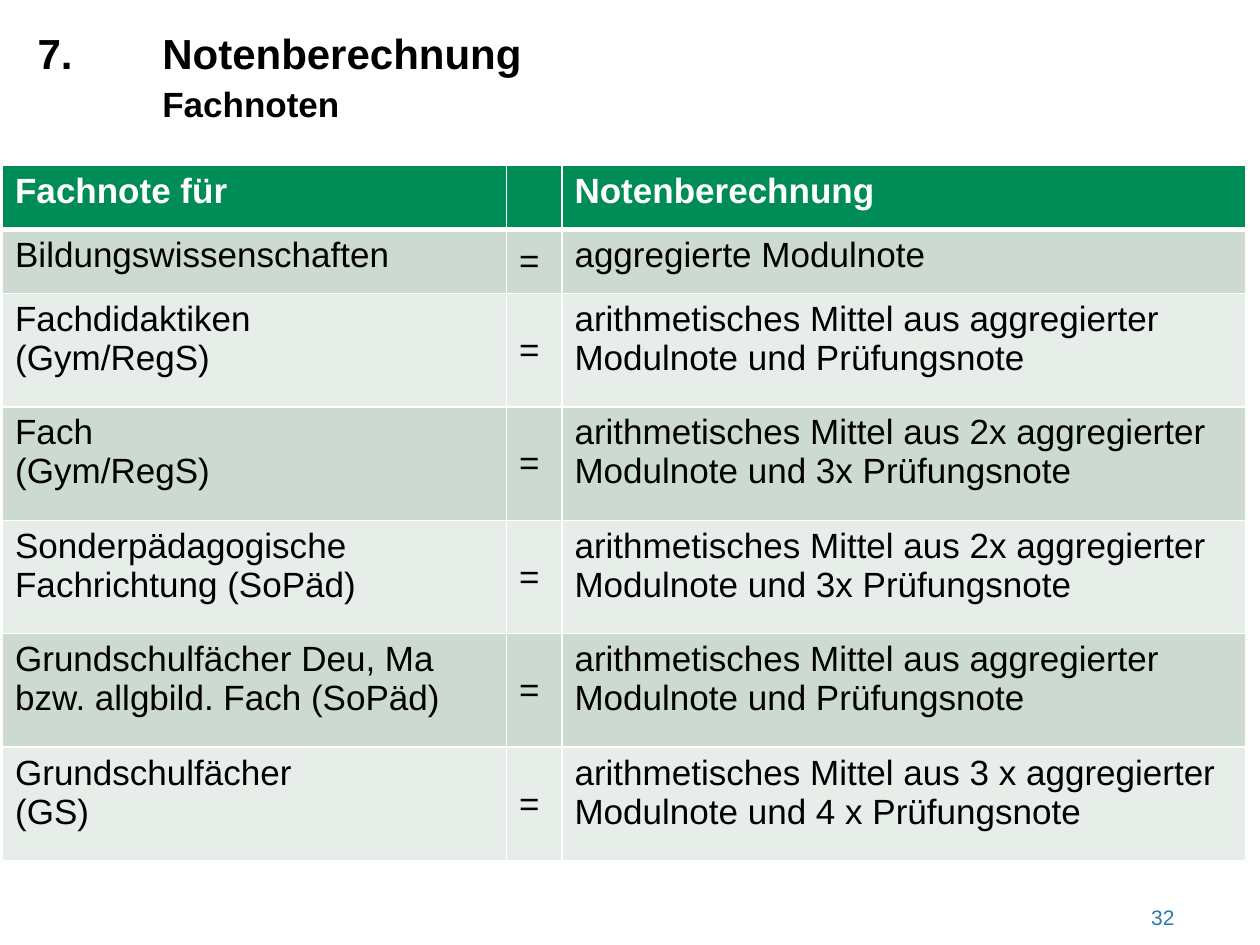
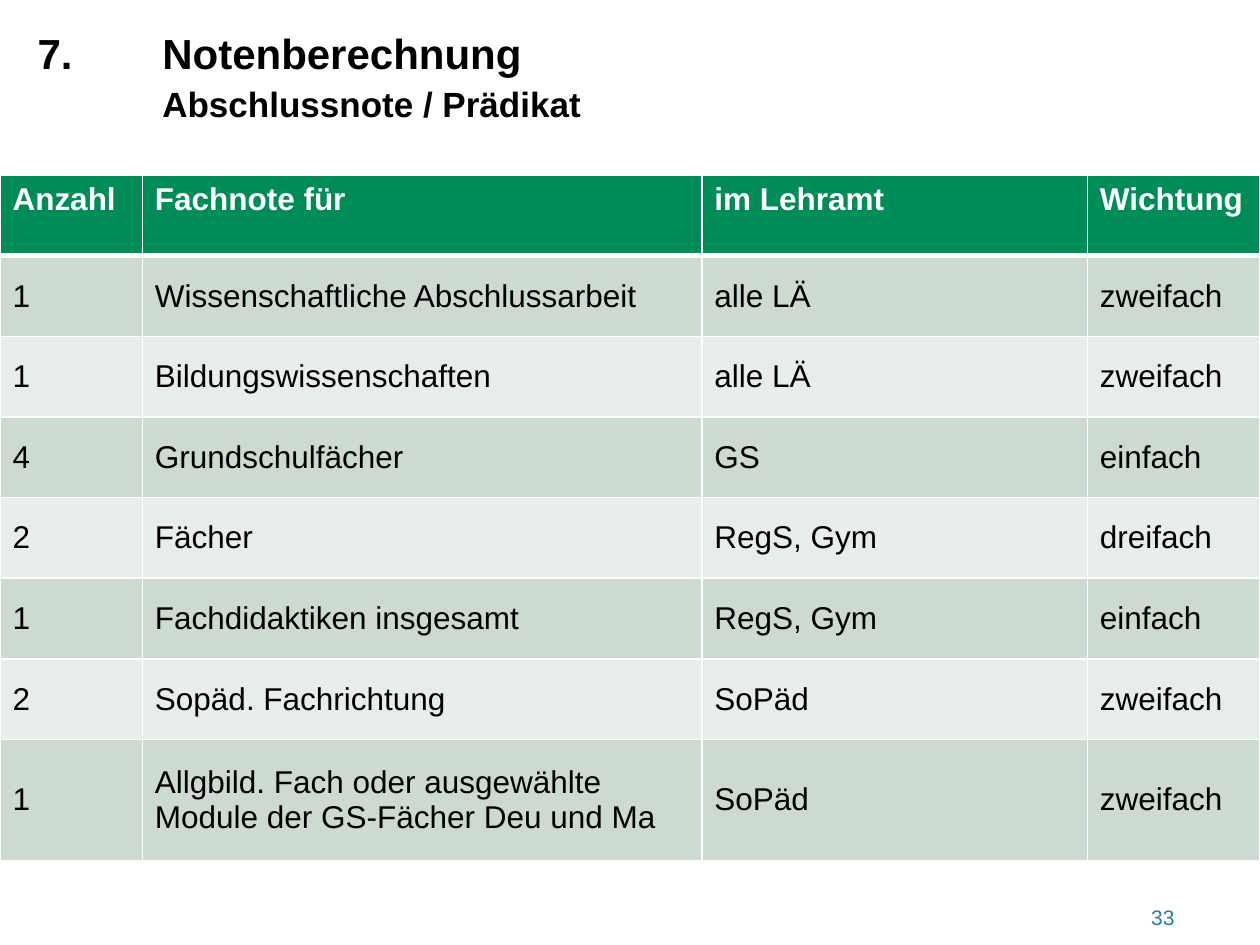
from dataclasses import dataclass

from lxml import etree
from pptx import Presentation
from pptx.dml.color import RGBColor
from pptx.enum.text import MSO_ANCHOR, PP_ALIGN
from pptx.oxml.ns import qn
from pptx.util import Inches, Pt

TOP, MIDDLE = MSO_ANCHOR.TOP, MSO_ANCHOR.MIDDLE
RIGHT = PP_ALIGN.RIGHT


@dataclass(frozen=True)
class Theme:
    font: str = "Arial"
    ink: str = "000000"
    white: str = "FFFFFF"
    header: str = "008C57"
    bands: tuple = ("CCDAD1", "E7EEEA")
    page: str = "287DA8"
    title_size: int = 24
    subtitle_size: int = 20
    page_size: int = 12
    grid: int = 1
    header_rule: int = 3
    title_indent: float = 0.99


def write(paragraph, text, *, font, size, color, bold=False):
    run = paragraph.add_run()
    run.text = text
    run.font.name = font
    run.font.size = Pt(size)
    run.font.bold = bold
    run.font.color.rgb = RGBColor.from_string(color)


def set_borders(cell, color, widths):
    """Draw cell edges; widths maps L, R, T, B (in that order) to points."""
    properties = cell._tc.get_or_add_tcPr()
    for side, width in widths.items():
        edge = etree.SubElement(properties, qn(f"a:ln{side}"), w=str(Pt(width)))
        fill = etree.SubElement(edge, qn("a:solidFill"))
        etree.SubElement(fill, qn("a:srgbClr"), val=color)


class Deck:
    def __init__(self, theme):
        self.theme = theme
        self.presentation = Presentation()
        self.presentation.slide_width = Inches(10)
        self.presentation.slide_height = Inches(7.5)
        self.slide = None

    def add_slide(self, number, title, subtitle, page):
        layout = self.presentation.slide_layouts[6]
        self.slide = self.presentation.slides.add_slide(layout)
        self.add_title(number, title, subtitle)
        self.add_page_number(page)

    def add_frame(self, left, top, width, height):
        box = self.slide.shapes.add_textbox(
            Inches(left), Inches(top), Inches(width), Inches(height))
        box.text_frame.word_wrap = True
        return box.text_frame

    def add_title(self, number, title, subtitle):
        theme = self.theme
        heading = self.add_frame(0.2, 0.13, 6.06, 1.18).paragraphs[0]
        indent = Inches(theme.title_indent)
        properties = heading._p.get_or_add_pPr()
        properties.set("marL", str(indent))
        properties.set("indent", str(-indent))
        heading.line_spacing = 1.1
        style = dict(font=theme.font, color=theme.ink, bold=True)
        write(heading, f"{number}\t{title}", size=theme.title_size, **style)
        heading.add_line_break()
        write(heading, subtitle, size=theme.subtitle_size, **style)

    def add_page_number(self, page):
        theme = self.theme
        footer = self.add_frame(8.49, 7, 0.93, 0.33).paragraphs[0]
        footer.alignment = RIGHT
        footer.line_spacing = Pt(24)
        write(footer, str(page), font=theme.font, size=theme.page_size, color=theme.page)

    def add_grade_table(self, left, top, columns, heights, rows, size, anchors):
        """Fill a banded table; anchors gives each column's place in the body rows."""
        table = self.slide.shapes.add_table(
            len(rows), len(columns), Inches(left), Inches(top),
            Inches(sum(columns)), Inches(sum(heights))).table
        for column, width in zip(table.columns, columns):
            column.width = Inches(width)
        for row, height in zip(table.rows, heights):
            row.height = Inches(height)
        for r, texts in enumerate(rows):
            for c, text in enumerate(texts):
                self.fill_cell(table.cell(r, c), r, text, size, anchors[c])

    def fill_cell(self, cell, row, text, size, anchor):
        theme = self.theme
        is_header = row == 0
        set_borders(cell, theme.white, {
            "L": theme.grid,
            "R": theme.grid,
            "T": theme.header_rule if row == 1 else theme.grid,
            "B": theme.header_rule if is_header else theme.grid,
        })
        cell.fill.solid()
        cell.fill.fore_color.rgb = RGBColor.from_string(
            theme.header if is_header else theme.bands[(row - 1) % 2])
        cell.vertical_anchor = TOP if is_header else anchor
        frame = cell.text_frame
        for i, line in enumerate(text.split("\n") if text else []):
            paragraph = frame.add_paragraph() if i else frame.paragraphs[0]
            write(paragraph, line, font=theme.font, size=size, bold=is_header,
                  color=theme.white if is_header else theme.ink)


def mean_of(module_grade, exam_grade):
    return f"arithmetisches Mittel aus {module_grade} Modulnote und {exam_grade}"


def main():
    deck = Deck(Theme())
    chapter = ("7.", "Notenberechnung")

    deck.add_slide(*chapter, "Fachnoten", 32)
    simple = mean_of("aggregierter", "Prüfungsnote")
    weighted = mean_of("2x aggregierter", "3x Prüfungsnote")
    primary = mean_of("3 x aggregierter", "4 x Prüfungsnote")
    calculations = [
        ("Bildungswissenschaften", "aggregierte Modulnote"),
        ("Fachdidaktiken\n(Gym/RegS)", simple),
        ("Fach\n(Gym/RegS)", weighted),
        ("Sonderpädagogische Fachrichtung (SoPäd)", weighted),
        ("Grundschulfächer Deu, Ma bzw. allgbild. Fach (SoPäd)", simple),
        ("Grundschulfächer\n(GS)", primary),
    ]
    deck.add_grade_table(
        0.02, 1.31, columns=[4, 0.44, 5.43], heights=[0.51] * 2 + [0.9] * 5,
        rows=[("Fachnote für", "", "Notenberechnung")]
        + [(subject, "=", formula) for subject, formula in calculations],
        size=20, anchors=[TOP, MIDDLE, TOP])

    deck.add_slide(*chapter, "Abschlussnote / Prädikat", 33)
    weights = [
        ("Anzahl", "Fachnote für", "im Lehramt", "Wichtung"),
        ("1", "Wissenschaftliche Abschlussarbeit", "alle LÄ", "zweifach"),
        ("1", "Bildungswissenschaften", "alle LÄ", "zweifach"),
        ("4", "Grundschulfächer", "GS", "einfach"),
        ("2", "Fächer", "RegS, Gym", "dreifach"),
        ("1", "Fachdidaktiken insgesamt", "RegS, Gym", "einfach"),
        ("2", "Sopäd. Fachrichtung", "SoPäd", "zweifach"),
        ("1", "Allgbild. Fach oder ausgewählte Module der GS-Fächer Deu und Ma",
         "SoPäd", "zweifach"),
    ]
    deck.add_grade_table(
        0, 1.39, columns=[1.13, 4.44, 3.06, 1.37], heights=[0.64] * 7 + [0.96],
        rows=weights, size=18, anchors=[MIDDLE] * 4)

    deck.presentation.save("out.pptx")


if __name__ == "__main__":
    main()
